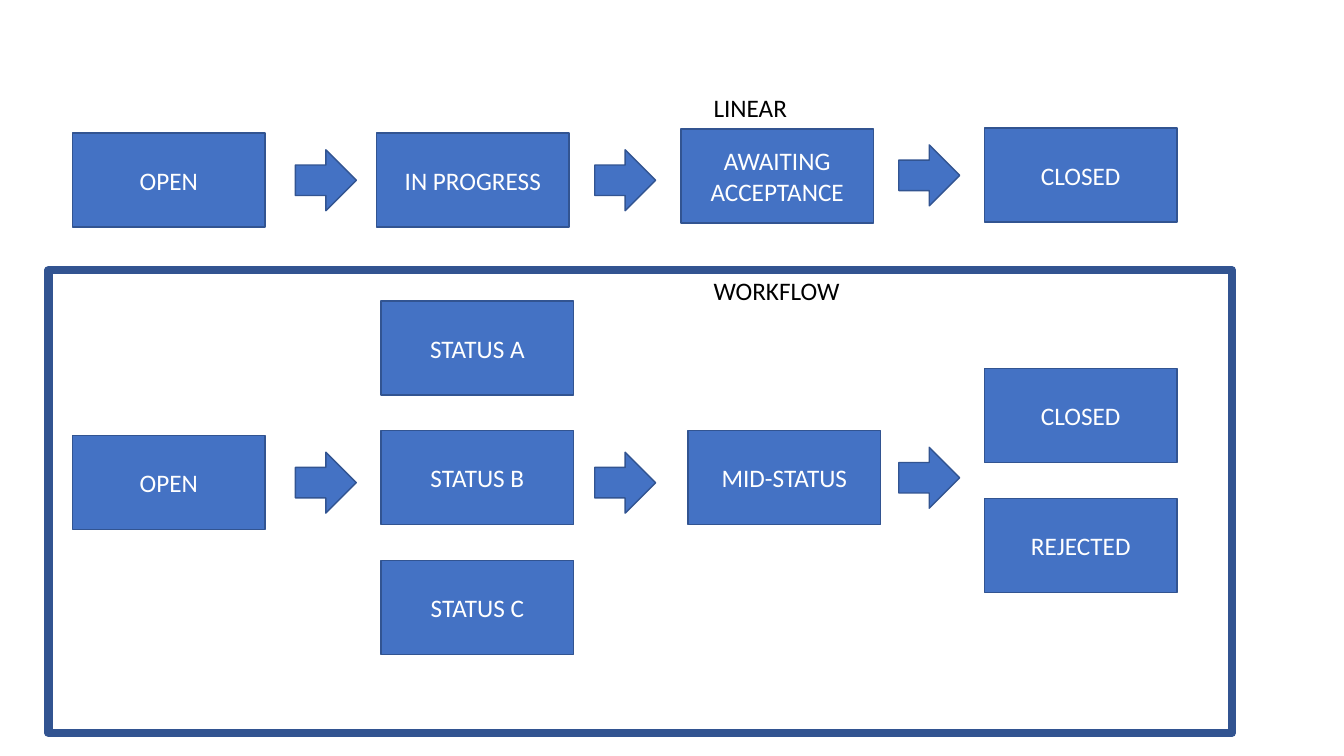
from pptx import Presentation
from pptx.dml.color import RGBColor
from pptx.enum.shapes import MSO_SHAPE
from pptx.enum.text import MSO_ANCHOR, MSO_AUTO_SIZE, PP_ALIGN
from pptx.util import Pt

COLORS = {"fill": "4472C4", "line": "325491", "light": "FFFFFF", "dark": "000000"}
FONT = "Calibri"
BOX_WIDTH, BOX_HEIGHT = 137.5, 67.2
ARROW_SIZE = 43.5
STATUS_LEFT, STATUS_TOP, STATUS_STEP = 272.2, 215, 92.6
OUTCOME_LEFT, OUTCOME_TOP = 703.2, 263.3
WORKFLOW_SHIFT = 216

LINEAR_STEPS = [
    ("OPEN", 51.8, 95),
    ("IN PROGRESS", 269, 95),
    ("AWAITING ACCEPTANCE", 486.4, 92),
    ("CLOSED", OUTCOME_LEFT, 91.5),
]
WORKFLOW_STEPS = [("OPEN", 51.8, 95 + WORKFLOW_SHIFT), ("MID-STATUS", 491.5, 307.5)]
STATUSES = ["STATUS A", "STATUS B", "STATUS C"]
OUTCOMES = ["CLOSED", "REJECTED"]
ARROWS = [(211, 107), (424.8, 107), (642, 103.5)]
FRAME = (34.6, 193, 845.3, 330.5)
HEADINGS = [
    ("LINEAR", 502.6, 62.6, 197.3, True),
    ("WORKFLOW", 502.6, 193, 105, False),
]


def color(name):
    return RGBColor.from_string(COLORS[name])


def add_text(shape, text, tone):
    shape.text_frame.text = text
    font = shape.text_frame.paragraphs[0].runs[0].font
    font.name = FONT
    font.size = Pt(18)
    font.color.rgb = color(tone)


def add_block(page, kind, left, top, width, height, filled=True, line_width=1):
    block = page.shapes.add_shape(kind, Pt(left), Pt(top), Pt(width), Pt(height))
    block.shadow.inherit = False
    if filled:
        block.fill.solid()
        block.fill.fore_color.rgb = color("fill")
    else:
        block.fill.background()
    block.line.color.rgb = color("line")
    block.line.width = Pt(line_width)
    return block


def add_step(page, text, left, top):
    box = add_block(page, MSO_SHAPE.RECTANGLE, left, top, BOX_WIDTH, BOX_HEIGHT)
    add_text(box, text, "light")
    box.text_frame.word_wrap = True
    box.text_frame.vertical_anchor = MSO_ANCHOR.MIDDLE
    box.text_frame.paragraphs[0].alignment = PP_ALIGN.CENTER


def add_heading(page, text, left, top, width, wrap):
    box = page.shapes.add_textbox(Pt(left), Pt(top), Pt(width), Pt(29))
    add_text(box, text, "dark")
    box.text_frame.word_wrap = wrap
    box.text_frame.auto_size = MSO_AUTO_SIZE.SHAPE_TO_FIT_TEXT


def main():
    deck = Presentation()
    deck.slide_width, deck.slide_height = Pt(960), Pt(540)
    page = deck.slides.add_slide(deck.slide_layouts[6])

    add_block(page, MSO_SHAPE.RECTANGLE, *FRAME, filled=False, line_width=6)
    steps = LINEAR_STEPS + WORKFLOW_STEPS
    for column, left, top in [
        (STATUSES, STATUS_LEFT, STATUS_TOP),
        (OUTCOMES, OUTCOME_LEFT, OUTCOME_TOP),
    ]:
        steps += [(text, left, top + row * STATUS_STEP) for row, text in enumerate(column)]
    for step in steps:
        add_step(page, *step)
    for shift in (0, WORKFLOW_SHIFT):
        for left, top in ARROWS:
            add_block(page, MSO_SHAPE.RIGHT_ARROW, left, top + shift, ARROW_SIZE, ARROW_SIZE)
    for heading in HEADINGS:
        add_heading(page, *heading)

    deck.save("out.pptx")


if __name__ == "__main__":
    main()
